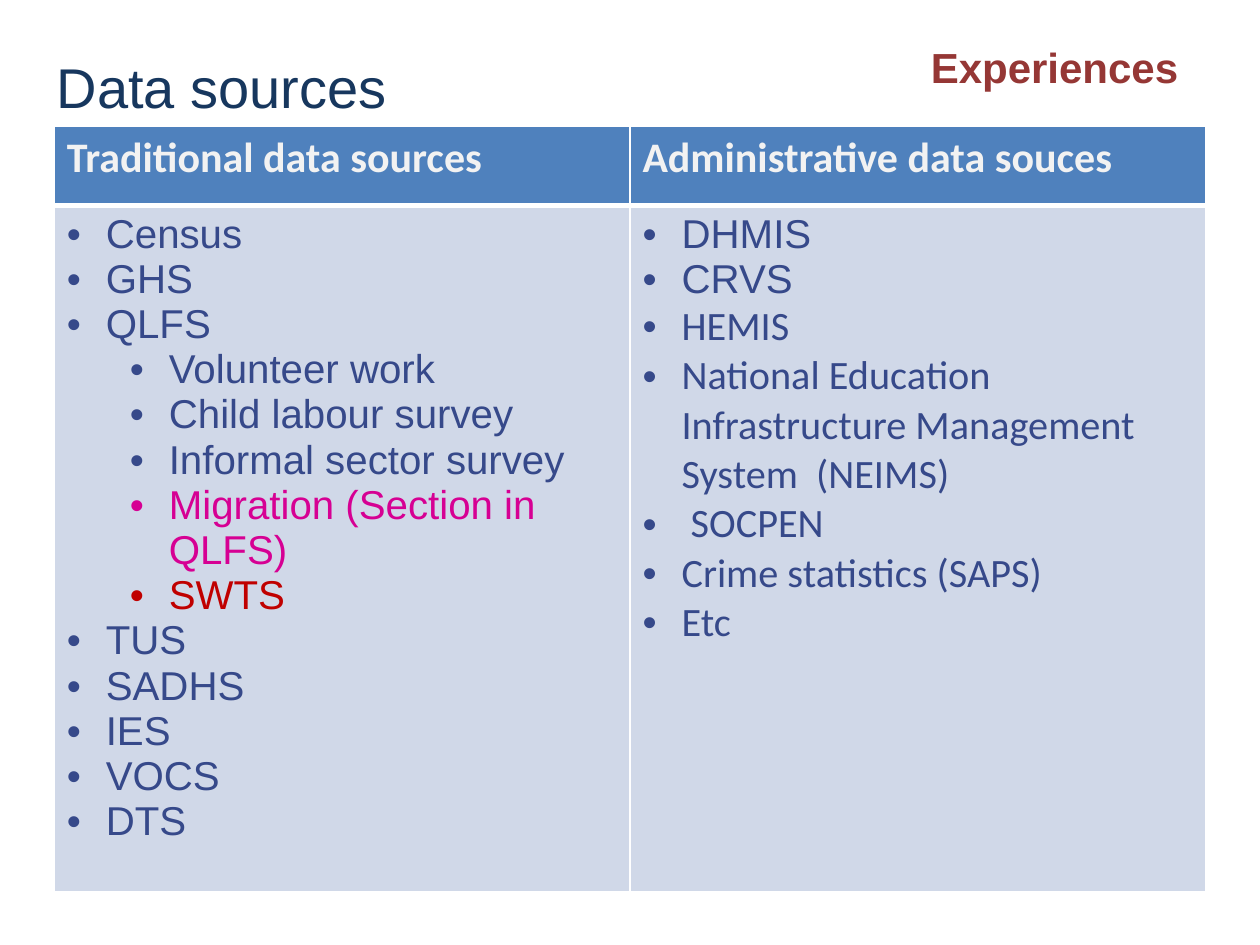
from dataclasses import dataclass

from pptx import Presentation
from pptx import util as u
from pptx.dml.color import RGBColor
from pptx.enum import text
from pptx.oxml.xmlchemy import OxmlElement

NAVY, MAROON, WHITE = "17375E", "953735", "FFFFFF"
INK, PINK, RED = "36498A", "D60093", "C00000"
HEAD_FILL, BODY_FILL = "4F81BD", "D0D8E8"


@dataclass
class Item:
    text: str
    level: int = 0
    hue: str = INK
    face: str = "Arial"


@dataclass
class Column:
    head: str
    items: list[Item]


COLUMNS = [
    Column("Traditional data sources", [
        *map(Item, ("Census", "GHS", "QLFS")),
        Item("Volunteer work", 1),
        Item("Child labour survey", 1),
        Item("Informal sector survey", 1),
        Item("Migration (Section in QLFS)", 1, PINK),
        Item("SWTS", 1, RED),
        *map(Item, ("TUS", "SADHS", "IES", "VOCS", "DTS")),
    ]),
    Column("Administrative data souces", [
        *map(Item, ("DHMIS", "CRVS")),
        *(Item(name, face="Calibri") for name in (
            "HEMIS",
            "National Education Infrastructure Management System  (NEIMS)",
            " SOCPEN", "Crime statistics (SAPS)", "Etc")),
    ]),
]


def color(code: str) -> RGBColor:
    return RGBColor.from_string(code)


def style(para, hue: str, **values) -> None:
    for name, value in values.items():
        setattr(para.font, name, value)
    para.font.color.rgb = color(hue)


def label(shape, words: str, box: tuple, align, hue: str, **values) -> None:
    for name, value in zip(("left", "top", "width", "height"), box):
        setattr(shape, name, u.Inches(value))
    frame = shape.text_frame
    frame.word_wrap = True
    frame.auto_size = text.MSO_AUTO_SIZE.NONE
    frame.vertical_anchor = text.MSO_ANCHOR.BOTTOM
    para = frame.paragraphs[0]
    para.text, para.alignment = words, align
    style(para, hue, name="Arial", **values)


def bullet(para, level: int) -> None:
    props = para._p.get_or_add_pPr()
    props.set("marL", str(u.Inches(0.31 + 0.5 * level)))
    props.set("indent", str(u.Inches(-0.31)))
    for tag, key, value in (("a:buFont", "typeface", "Arial"),
                            ("a:buChar", "char", "•")):
        mark = OxmlElement(tag)
        mark.set(key, value)
        props.append(mark)


def border(cell, **widths: float) -> None:
    """Draw white edges; these must precede the fill in the cell's XML."""
    props = cell._tc.get_or_add_tcPr()
    for side in "LRTB":
        line = OxmlElement(f"a:ln{side}")
        line.set("w", str(u.Pt(widths.get(side, 1))))
        fill, hue = OxmlElement("a:solidFill"), OxmlElement("a:srgbClr")
        hue.set("val", WHITE)
        fill.append(hue)
        line.append(fill)
        props.append(line)


def paint(cell, fill: str, **widths: float) -> None:
    border(cell, **widths)
    cell.fill.solid()
    cell.fill.fore_color.rgb = color(fill)


def fill_column(table, index: int, column: Column) -> None:
    table.columns[index].width = u.Inches(4.57)
    head, body = table.cell(0, index), table.cell(1, index)
    paint(head, HEAD_FILL, B=3)
    paint(body, BODY_FILL, T=3)
    head.text = column.head
    style(head.text_frame.paragraphs[0], "F2F2F2",
          name="Calibri", size=u.Pt(24), bold=True)
    frame = body.text_frame
    for row, item in enumerate(column.items):
        para = frame.add_paragraph() if row else frame.paragraphs[0]
        para.text, para.level = item.text, item.level
        bullet(para, item.level)
        style(para, item.hue, name=item.face, size=u.Pt(23), bold=False)


def main() -> None:
    deck = Presentation()
    deck.slide_width, deck.slide_height = u.Inches(10), u.Inches(7.5)
    slide = deck.slides.add_slide(deck.slide_layouts[5])

    # Title and section label
    label(slide.shapes.title, "Data sources", (0.35, 0.36, 9.21, 0.64),
          text.PP_ALIGN.LEFT, NAVY, size=u.Pt(32))
    tag = slide.shapes.add_textbox(0, 0, 0, 0)
    label(tag, "Experiences", (0, 0.28, 9.45, 0.5),
          text.PP_ALIGN.RIGHT, MAROON, size=u.Pt(24), bold=True)

    # Table of sources
    heights = (0.63, 5.45)
    table = slide.shapes.add_table(
        2, len(COLUMNS), u.Inches(0.43), u.Inches(1),
        u.Inches(9.14), u.Inches(sum(heights))).table
    for row, height in zip(table.rows, heights):
        row.height = u.Inches(height)
    for index, column in enumerate(COLUMNS):
        fill_column(table, index, column)

    deck.save("out.pptx")


if __name__ == "__main__":
    main()
